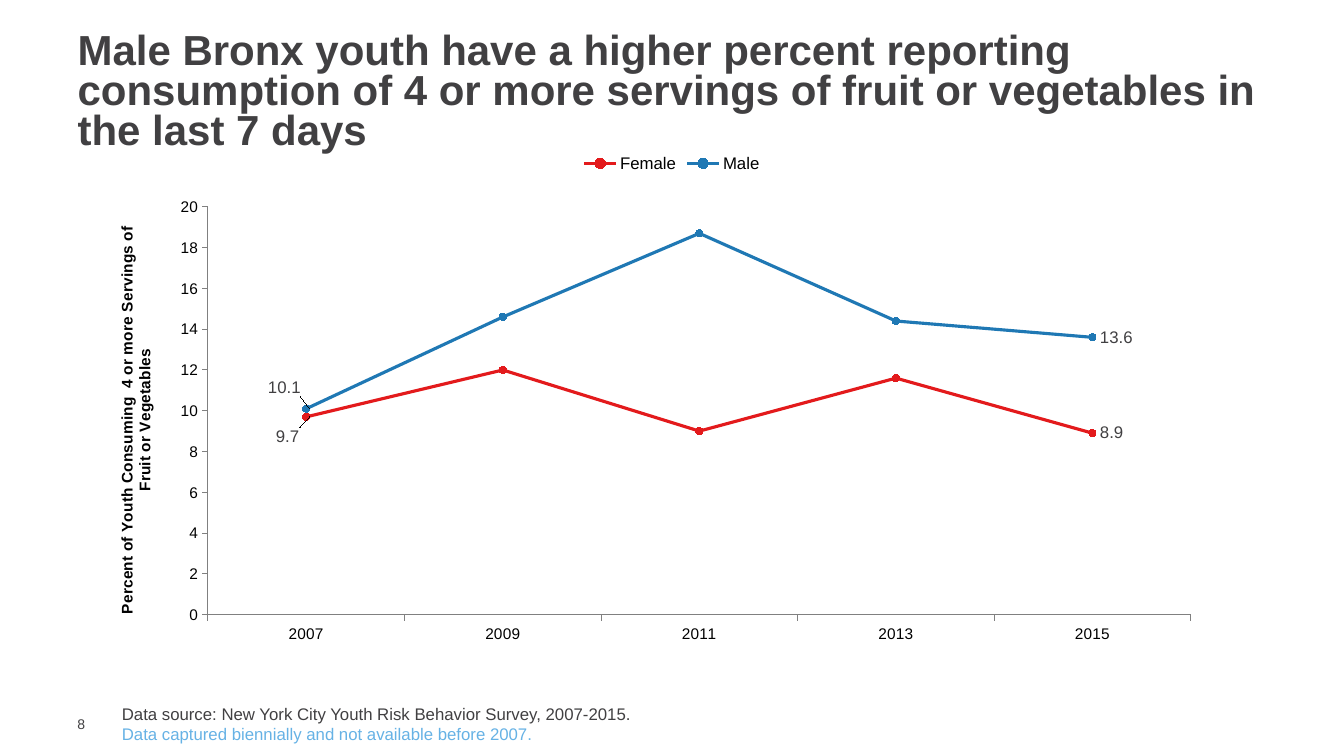
from lxml import etree
from pptx import Presentation
from pptx.chart.data import CategoryChartData
from pptx.dml.color import RGBColor
from pptx.enum.chart import (XL_CHART_TYPE, XL_LABEL_POSITION, XL_LEGEND_POSITION,
                             XL_MARKER_STYLE, XL_TICK_MARK)
from pptx.enum.text import MSO_ANCHOR, MSO_AUTO_SIZE, PP_ALIGN
from pptx.oxml import parse_xml
from pptx.util import Inches, Pt

LINE_MARKERS = XL_CHART_TYPE.LINE_MARKERS
LABEL_RIGHT = XL_LABEL_POSITION.RIGHT
LEGEND_TOP = XL_LEGEND_POSITION.TOP
CIRCLE = XL_MARKER_STYLE.CIRCLE
TICK_OUT, TICK_NONE = XL_TICK_MARK.OUTSIDE, XL_TICK_MARK.NONE
MIDDLE, TOP = MSO_ANCHOR.MIDDLE, MSO_ANCHOR.TOP
NO_FIT = MSO_AUTO_SIZE.NONE
LEFT = PP_ALIGN.LEFT

DARK = RGBColor(0x41, 0x40, 0x42)
BLACK = RGBColor(0, 0, 0)
GRAY = RGBColor(0x80, 0x80, 0x80)
RED = RGBColor(0xE3, 0x1A, 0x1C)
BLUE = RGBColor(0x1F, 0x78, 0xB4)
LIGHT_BLUE = RGBColor(0x66, 0xB2, 0xE5)
FONT = "Arial"

TITLE = ("Male Bronx youth have a higher percent reporting consumption of "
         "4 or more servings of fruit or vegetables in the last 7 days")
AXIS_TITLE = "Percent of Youth Consuming  4 or more Servings of Fruit or Vegetables"
PAGE = "8"
NOTES = [("Data source: New York City Youth Risk Behavior Survey, 2007-2015.", DARK),
         ("Data captured biennially and not available before 2007.", LIGHT_BLUE)]
YEARS = ["2007", "2009", "2011", "2013", "2015"]
SERIES = [
    {"name": "Female", "values": [9.7, 12, 9, 11.6, 8.9], "color": RED,
     "first_label_shift": (-0.034, 0.037)},
    {"name": "Male", "values": [10.1, 14.6, 18.7, 14.4, 13.6], "color": BLUE,
     "first_label_shift": (-0.041, -0.039)},
]
PLOT_AREA = {"x": 0.085, "y": 0.118, "w": 0.879, "h": 0.755}

NS_C = "http://schemas.openxmlformats.org/drawingml/2006/chart"
LEADER_LINES = (
    f'<c:extLst xmlns:c="{NS_C}"><c:ext uri="{{CE6537A1-D6FC-4f65-9D91-7224C49458BB}}" '
    'xmlns:c15="http://schemas.microsoft.com/office/drawing/2012/chart">'
    '<c15:showLeaderLines val="1"/></c:ext></c:extLst>')


def style_font(font, size, color=BLACK, bold=False):
    font.name, font.size, font.bold = FONT, Pt(size), bold
    font.color.rgb = color


def write(p, text, size, color=DARK, bold=False, spacing=None):
    p.alignment = LEFT
    if spacing:
        p.line_spacing = spacing
    r = p.add_run()
    r.text = text
    style_font(r.font, size, color, bold)


def place(sp, x, y, w, h):
    sp.left, sp.top, sp.width, sp.height = (Inches(v) for v in (x, y, w, h))


def add_box(slide, x, y, w, h, anchor=TOP):
    tf = slide.shapes.add_textbox(*(Inches(v) for v in (x, y, w, h))).text_frame
    tf.word_wrap = True
    tf.vertical_anchor = anchor
    return tf


def manual_layout(values, inner=False):
    layout = etree.Element(f"{{{NS_C}}}layout")
    manual = etree.SubElement(layout, f"{{{NS_C}}}manualLayout")
    settings = {"layoutTarget": "inner", "xMode": "edge", "yMode": "edge"} if inner else {}
    for tag, value in {**settings, **values}.items():
        etree.SubElement(manual, f"{{{NS_C}}}{tag}").set("val", str(value))
    return parse_xml(etree.tostring(layout))


def style_axis(axis):
    axis.has_major_gridlines = False
    axis.major_tick_mark, axis.minor_tick_mark = TICK_OUT, TICK_NONE
    axis.format.line.color.rgb = GRAY
    axis.format.line.width = Pt(0.75)
    style_font(axis.tick_labels.font, 11)


def style_series(series, color, shift):
    series.smooth = False
    series.format.line.color.rgb = color
    series.format.line.width = Pt(2.25)
    marker = series.marker
    marker.style, marker.size = CIRCLE, 5
    marker.format.fill.solid()
    marker.format.fill.fore_color.rgb = color
    marker.format.line.color.rgb = color
    labels = series.data_labels
    labels.show_value = False
    for i in (0, len(YEARS) - 1):
        label = series.points[i].data_label
        style_font(label.font, 12, DARK)
        label.position = LABEL_RIGHT
    first = series._element.find(f".//{{{NS_C}}}dLbl")
    first.insert(1, manual_layout(dict(zip("xy", shift))))
    labels._element.append(parse_xml(LEADER_LINES))


def add_line_chart(slide, x, y, w, h):
    data = CategoryChartData()
    data.categories = YEARS
    for s in SERIES:
        data.add_series(s["name"], s["values"])
    chart = slide.shapes.add_chart(
        LINE_MARKERS, *(Inches(v) for v in (x, y, w, h)), data).chart
    style_font(chart.font, 10, DARK)
    chart.has_title = False
    chart.has_legend = True
    chart.legend.position = LEGEND_TOP
    chart.legend.include_in_layout = False
    style_font(chart.legend.font, 12)

    style_axis(chart.category_axis)
    axis = chart.value_axis
    style_axis(axis)
    axis.minimum_scale, axis.maximum_scale, axis.major_unit = 0, 20, 2
    axis.has_title = True
    r = axis.axis_title.text_frame.paragraphs[0].add_run()
    r.text = AXIS_TITLE
    style_font(r.font, 11, bold=True)

    plot = chart.plots[0]
    plot.vary_by_categories = False
    for series, s in zip(plot.series, SERIES):
        style_series(series, s["color"], s["first_label_shift"])

    plot_area = chart._chartSpace.find(f".//{{{NS_C}}}plotArea")
    for old in plot_area.findall(f"{{{NS_C}}}layout"):
        plot_area.remove(old)
    plot_area.insert(0, manual_layout(PLOT_AREA, inner=True))


def main():
    prs = Presentation()
    prs.slide_width, prs.slide_height = Inches(13.33), Inches(7.5)
    slide = prs.slides.add_slide(prs.slide_layouts[5])

    title = slide.shapes.title
    place(title, 0.67, 0.27, 12, 1.31)
    tf = title.text_frame
    tf.auto_size, tf.vertical_anchor, tf.word_wrap = NO_FIT, MIDDLE, True
    write(tf.paragraphs[0], TITLE, 30, bold=True, spacing=0.8)

    add_line_chart(slide, 1.12, 1.42, 11.09, 5.36)

    tf = add_box(slide, 0.67, 7.1, 0.43, 0.17, MIDDLE)
    tf.margin_right = tf.margin_top = tf.margin_bottom = 0
    write(tf.paragraphs[0], PAGE, 10)

    tf = add_box(slide, 1.11, 6.93, 9.71, 0.5)
    for i, (text, color) in enumerate(NOTES):
        p = tf.add_paragraph() if i else tf.paragraphs[0]
        write(p, text, 12, color)

    prs.save("out.pptx")


if __name__ == "__main__":
    main()
